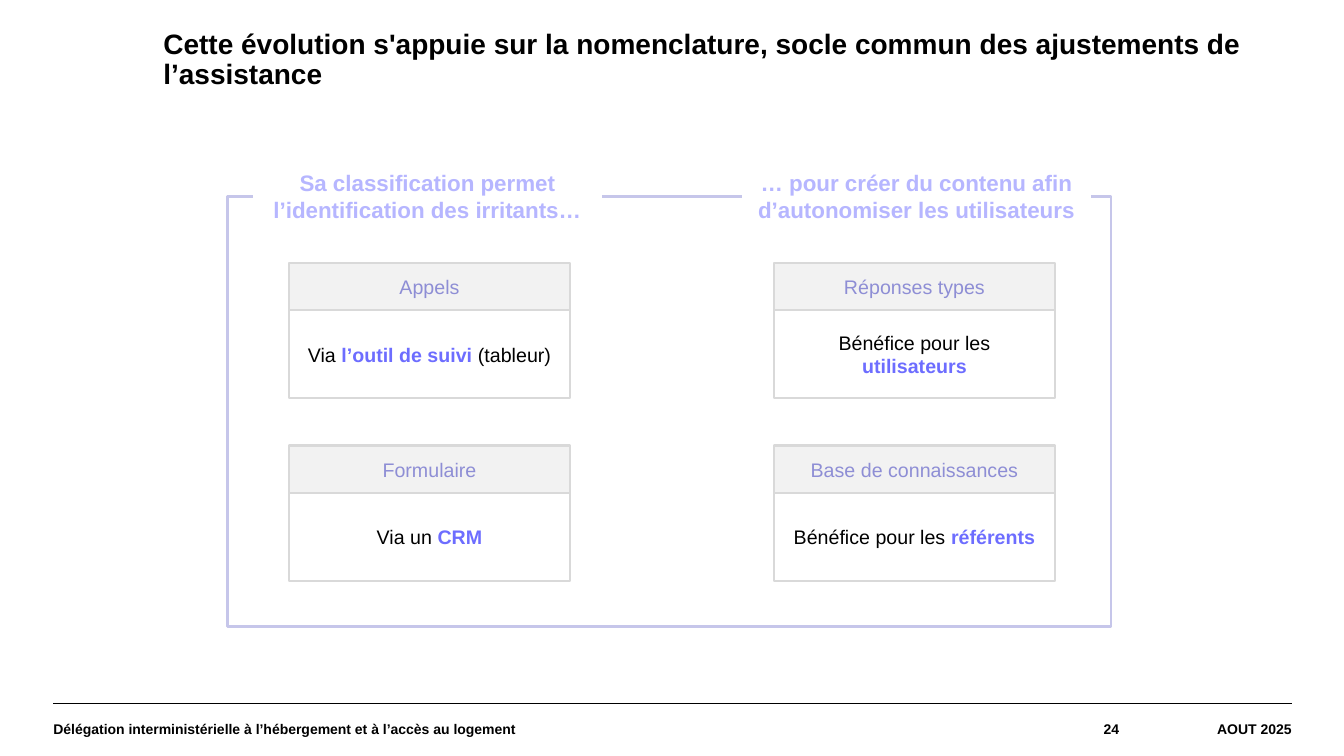
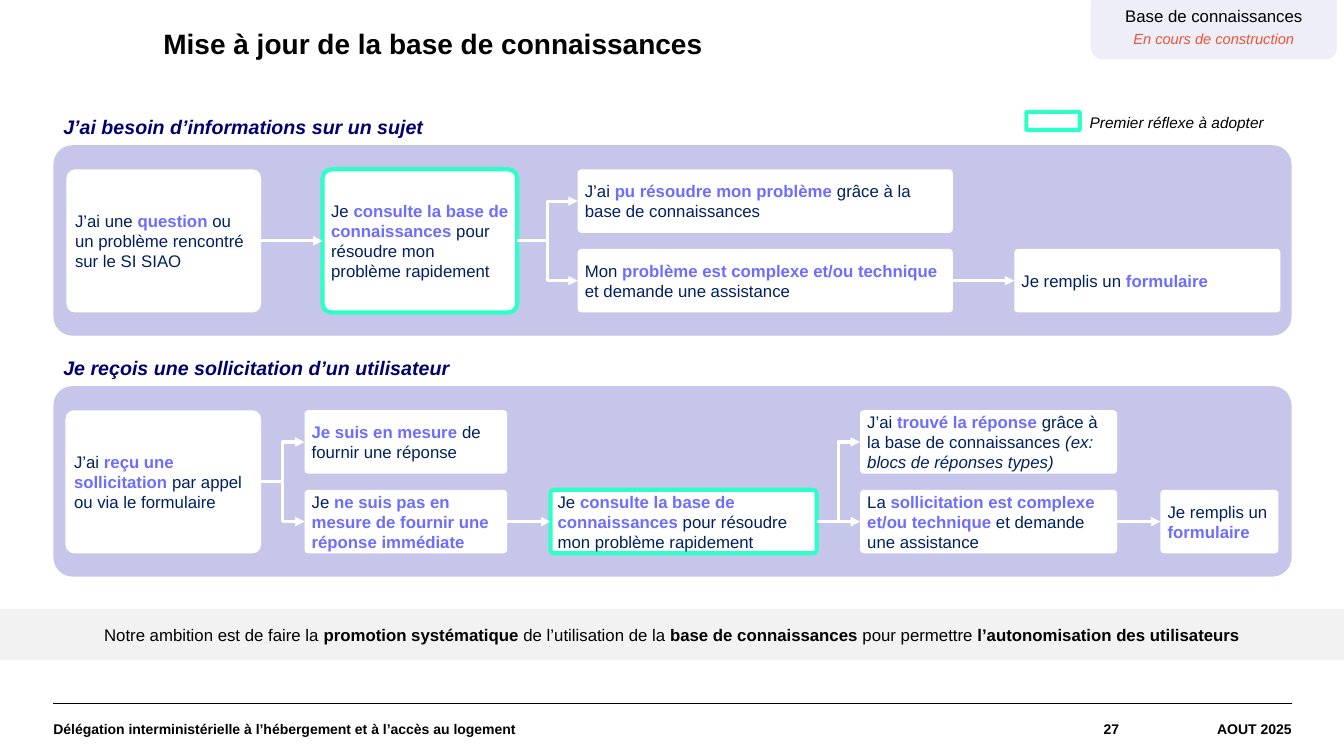
"""Builds two slides on the support nomenclature and the knowledge base."""
from lxml import etree
from pptx import Presentation
from pptx.dml.color import RGBColor
from pptx.enum.shapes import MSO_CONNECTOR, MSO_SHAPE
from pptx.enum.text import MSO_ANCHOR, PP_ALIGN
from pptx.oxml.ns import qn
from pptx.util import Inches, Pt

RECT, ROUND = MSO_SHAPE.RECTANGLE, MSO_SHAPE.ROUNDED_RECTANGLE
STRAIGHT, ELBOW = MSO_CONNECTOR.STRAIGHT, MSO_CONNECTOR.ELBOW
TOP, MIDDLE = MSO_ANCHOR.TOP, MSO_ANCHOR.MIDDLE
LEFT, CENTER, RIGHT = PP_ALIGN.LEFT, PP_ALIGN.CENTER, PP_ALIGN.RIGHT

W, H = 13.33, 7.5
BLACK, WHITE, GREY, BORDER = "000000", "FFFFFF", "F2F2F2", "D9D9D9"
LILAC, PALE_LILAC, LABEL, HEADER = "C6C6EA", "EEEEF9", "B6B6FF", "8E8ED5"
ACCENT, NAVY, INK, MINT, ORANGE = "6D6DFF", "00006D", "002060", "2CFFC8", "EA5433"
MARGIN, INNER = 0.53, 12.28
RADIUS = 0.06

TITLE = {"size": Pt(20), "bold": True}
FOOTER = {"size": Pt(10), "bold": True}
SECTION = {"size": Pt(14), "bold": True, "italic": True}


def box(s, kind, at, fill=None, line=None, weight=1.5, radius=None,
        inset=(0.1, 0.05), anchor=MIDDLE):
    at = [Inches(v) for v in at]
    sp = s.shapes.add_shape(kind, *at) if kind else s.shapes.add_textbox(*at)
    if kind:
        sp.shadow.inherit = False
    if fill:
        sp.fill.solid()
        sp.fill.fore_color.rgb = RGBColor.from_string(fill)
    else:
        sp.fill.background()
    if line:
        sp.line.color.rgb = RGBColor.from_string(line)
        sp.line.width = Pt(weight)
    else:
        sp.line.fill.background()
    if radius:
        sp.adjustments[0] = radius
    tf = sp.text_frame
    tf.word_wrap = True
    tf.vertical_anchor = anchor
    tf.margin_left = tf.margin_right = Inches(inset[0])
    tf.margin_top = tf.margin_bottom = Inches(inset[1])
    return sp


def write(p, text, fmt, color=BLACK, accent=None, align=LEFT):
    p.alignment = align
    for i, part in enumerate(text.split("*")):
        for j, piece in enumerate(part.split("_")):
            if not piece:
                continue
            r = p.add_run()
            r.text = piece
            marks = {"bold": True} if i % 2 else {"italic": True} if j % 2 else {}
            for name, value in {"name": "Arial", **fmt, **marks}.items():
                setattr(r.font, name, value)
            tint = accent if accent and i % 2 else color
            r.font.color.rgb = RGBColor.from_string(tint)


prs = Presentation()
prs.slide_width, prs.slide_height = Inches(W), Inches(H)
lines = []
slides = []

for title, number in (
    ("Cette évolution s'appuie sur la nomenclature, socle commun des ajustements de l’assistance", "24"),
    ("Mise à jour de la base de connaissances", "27"),
):
    s = prs.slides.add_slide(prs.slide_layouts[6])
    slides.append(s)
    rule = s.shapes.add_connector(
        STRAIGHT, Inches(MARGIN), Inches(6.98), Inches(MARGIN + INNER), Inches(6.98))
    lines.append((rule, BLACK, 0.8, False))
    left = MARGIN
    for text, width, align in (
        ("Délégation interministérielle à l’hébergement et à l’accès au logement", 8.6, LEFT),
        (number, 1.97, RIGHT),
        ("AOUT 2025", 1.71, RIGHT),
    ):
        sp = box(s, None, (left, 6.97, width, 0.53), inset=(0, 0))
        write(sp.text_frame.paragraphs[0], text, FOOTER, align=align)
        left += width
    sp = box(s, None, (1.62, 0.3, 11.23, 1.05), inset=(0, 0), anchor=TOP)
    p = sp.text_frame.paragraphs[0]
    p.line_spacing = 0.9
    write(p, title, TITLE)

s = slides[0]
CARD_X, CARD_Y, CARD_W, HEAD_H, BODY_H = 2.87, 2.61, 2.78, 0.47, 0.87
COL_STEP, ROW_STEP = 4.81, 1.81
cards = (
    (("Appels", "Via *l’outil de suivi* (tableur)"),
     ("Réponses types", "Bénéfice pour les *utilisateurs*")),
    (("Formulaire", "Via un *CRM*"),
     ("Base de connaissances", "Bénéfice pour les *référents*")),
)
for row, pair in enumerate(cards):
    for col, (head, body) in enumerate(pair):
        x, y = CARD_X + col * COL_STEP, CARD_Y + row * ROW_STEP
        sp = box(s, RECT, (x, y + HEAD_H, CARD_W, BODY_H), line=BORDER)
        write(sp.text_frame.paragraphs[0], body, {"size": Pt(14)}, accent=ACCENT, align=CENTER)
        sp = box(s, RECT, (x, y, CARD_W, HEAD_H), GREY, BORDER)
        write(sp.text_frame.paragraphs[0], head, {"size": Pt(14)}, HEADER, align=CENTER)

box(s, RECT, (2.26, 1.95, 8.76, 4.27), line=LILAC, weight=2)
for col, text in enumerate((
    "Sa classification permet l’identification des irritants…",
    "… pour créer du contenu afin d’autonomiser les utilisateurs",
)):
    sp = box(s, RECT, (2.51 + col * 4.85, 1.71, 3.46, 0.47), WHITE)
    write(sp.text_frame.paragraphs[0], text, {"size": Pt(16), "bold": True}, LABEL, align=CENTER)

s = slides[1]
BAND_H, PAD, STEP_H, STEP_PITCH = 1.89, 0.24, 0.63, 0.79
CONSULT = "Je *consulte la base de connaissances* pour résoudre mon problème rapidement"
FORM = "Je remplis un *formulaire*"
flows = (
    {"title": "J’ai besoin d’informations sur un sujet", "top": 1.44,
     "columns": ((0.66, 1.93), (3.2, 1.93), (5.73, 3.72), (10.06, 2.64)),
     "steps": (
         (0, 0, 2, "J’ai une *question* ou un problème rencontré sur le SI SIAO"),
         (1, 0, 2, CONSULT),
         (2, 0, 1, "J’ai *pu résoudre mon problème* grâce à la base de connaissances"),
         (2, 1, 1, "Mon *problème est complexe et/ou technique* et demande une assistance"),
         (3, 1, 1, FORM)),
     "links": ((0, 1), (1, 2), (1, 3), (3, 4))},
    {"title": "Je reçois une sollicitation d’un utilisateur", "top": 3.83,
     "columns": ((0.65, 1.94), (3.02, 2.01), (5.46, 2.64), (8.53, 2.55), (11.51, 1.17)),
     "steps": (
         (0, 0, 2, "J’ai *reçu une sollicitation* par appel ou via le formulaire"),
         (1, 0, 1, "*Je suis en mesure* de fournir une réponse"),
         (1, 1, 1, "Je *ne suis pas en mesure de fournir une réponse immédiate*"),
         (2, 1, 1, CONSULT),
         (3, 0, 1, "J’ai *trouvé la réponse* grâce à la base de connaissances "
                   "_(ex: blocs de réponses types)_"),
         (3, 1, 1, "La *sollicitation est complexe et/ou technique* et demande une assistance"),
         (4, 1, 1, FORM)),
     "links": ((0, 1), (0, 2), (2, 3), (3, 4), (3, 5), (5, 6))},
)
for flow in flows:
    top = flow["top"]
    sp = box(s, None, (MARGIN, top - 0.35, 5, 0.34))
    write(sp.text_frame.paragraphs[0], flow["title"], SECTION, NAVY)
    box(s, ROUND, (MARGIN, top, INNER, BAND_H), LILAC, radius=0.1)
    nodes = []
    for col, row, span, text in flow["steps"]:
        x, width = flow["columns"][col]
        height = STEP_H + (span - 1) * STEP_PITCH
        sp = box(s, ROUND, (x, top + PAD + row * STEP_PITCH, width, height), WHITE,
                 MINT if text == CONSULT else None, 3, RADIUS, (0.06, 0.08))
        write(sp.text_frame.paragraphs[0], text, {"size": Pt(12)}, INK, ACCENT)
        nodes.append(sp)
    for a, b in flow["links"]:
        level = flow["steps"][a][1:3] == flow["steps"][b][1:3]
        link = s.shapes.add_connector(STRAIGHT if level else ELBOW, 0, 0, 0, 0)
        link.begin_connect(nodes[a], 3)
        link.end_connect(nodes[b], 1)
        lines.append((link, WHITE, 2.25, True))

box(s, ROUND, (10.18, 1.11, 0.53, 0.18), WHITE, MINT, 3, RADIUS)
sp = box(s, None, (10.71, 1.12, 2.27, 0.18))
write(sp.text_frame.paragraphs[0], "Premier réflexe à adopter", {"size": Pt(11), "italic": True})

sp = box(s, RECT, (0, 6.04, W, 0.51), GREY)
write(sp.text_frame.paragraphs[0],
      "Notre ambition est de faire la *promotion systématique* de l’utilisation de la "
      "*base de connaissances* pour permettre *l’autonomisation des utilisateurs*",
      {"size": Pt(12)}, align=CENTER)

sp = box(s, ROUND, (10.82, -0.1, 2.44, 0.69), PALE_LILAC, anchor=TOP)
tf = sp.text_frame
tf.margin_top = Inches(0.12)
p = tf.paragraphs[0]
p.space_after = Pt(3)
write(p, "Base de connaissances", {"size": Pt(12)}, align=CENTER)
write(tf.add_paragraph(), "En cours de construction",
      {"size": Pt(10.5), "italic": True}, ORANGE, align=CENTER)

for c, color, weight, arrow in lines:
    c.line.color.rgb = RGBColor.from_string(color)
    c.line.width = Pt(weight)
    spPr = c.element.spPr
    if arrow:
        etree.SubElement(spPr.find(qn("a:ln")), qn("a:tailEnd"), type="triangle")
    etree.SubElement(spPr, qn("a:effectLst"))

prs.save("out.pptx")
